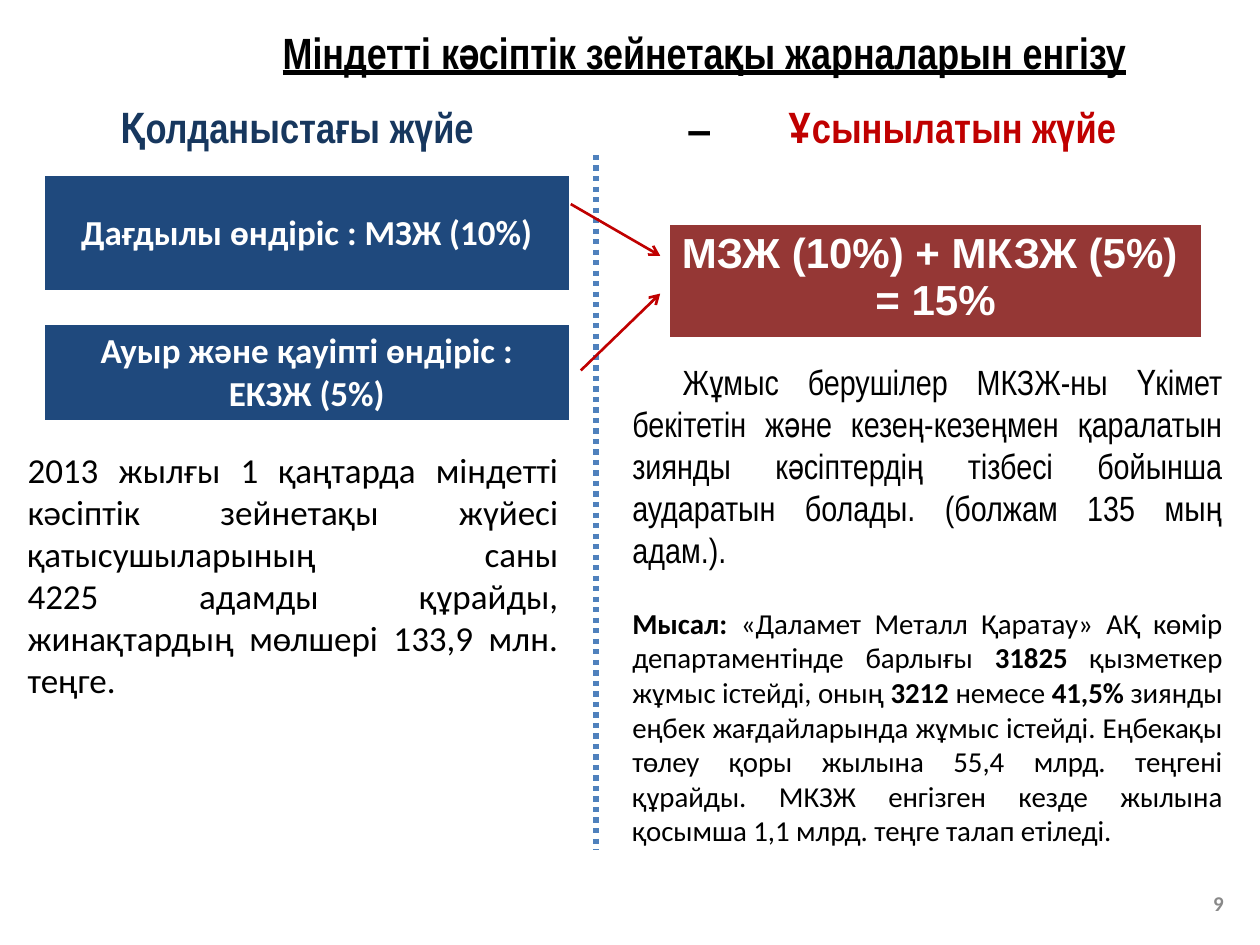
import pptx
import pptx.util
import pptx.dml.color
import pptx.enum.dml
import pptx.enum.shapes
import pptx.enum.text
from pptx.oxml.xmlchemy import OxmlElement
from pptx.util import Inches

ALIGN = pptx.enum.text.PP_ALIGN
ANCHOR = pptx.enum.text.MSO_ANCHOR
DASH = pptx.enum.dml.MSO_LINE_DASH_STYLE

BLACK, WHITE, GREY = "000000", "FFFFFF", "898989"
NAVY, BLUE, LINE_BLUE = "17375E", "1F497D", "4F81BD"
RED, BRICK = "C00000", "953735"
NARROW, BODY, SANS = "Arial Narrow", "Calibri", "Arial"


def rgb(value):
    return pptx.dml.color.RGBColor.from_string(value)


class SlideBuilder:
    def __init__(self, prs):
        self.s = prs.slides.add_slide(prs.slide_layouts[6])

    def format(self, p, size, font, color=BLACK, bold=False, align=ALIGN.CENTER):
        p.alignment = align
        for r in p.runs:
            r.font.size = pptx.util.Pt(size)
            r.font.name = font
            r.font.bold = bold
            r.font.color.rgb = rgb(color)

    def text(self, x, y, w, h, text, size, font, anchor=ANCHOR.TOP, **style):
        tf = self.s.shapes.add_textbox(Inches(x), Inches(y), Inches(w), Inches(h)).text_frame
        tf.word_wrap = True
        tf.vertical_anchor = anchor
        tf.text = text
        self.format(tf.paragraphs[0], size, font, **style)
        return tf

    def mixed_paragraph(self, tf, parts, size, font, align):
        """Add a paragraph whose parts alternate between bold and regular."""
        p = tf.add_paragraph()
        for part in parts:
            p.add_run().text = part
        self.format(p, size, font, align=align)
        for r in p.runs[::2]:
            r.font.bold = True
        return p

    def box(self, x, y, w, h, text, size, font, fill, anchor=ANCHOR.MIDDLE):
        """Add a table of one cell."""
        tbl = self.s.shapes.add_table(1, 1, Inches(x), Inches(y), Inches(w), Inches(h)).table
        cell = tbl.cell(0, 0)
        cell.fill.solid()
        cell.fill.fore_color.rgb = rgb(fill)
        cell.vertical_anchor = anchor
        cell.text_frame.text = text
        self.format(cell.text_frame.paragraphs[0], size, font, WHITE, True)

    def line(self, x1, y1, x2, y2, color, width, dash=None, arrow=False):
        c = self.s.shapes.add_connector(
            pptx.enum.shapes.MSO_CONNECTOR.STRAIGHT,
            Inches(x1), Inches(y1), Inches(x2), Inches(y2))
        c.line.color.rgb = rgb(color)
        c.line.width = pptx.util.Pt(width)
        if dash:
            c.line.dash_style = dash
        if arrow:
            tail = OxmlElement("a:tailEnd")
            tail.set("type", "arrow")
            c.line._get_or_add_ln().append(tail)
        c._element.spPr.append(OxmlElement("a:effectLst"))


def main():
    prs = pptx.Presentation()
    prs.slide_width, prs.slide_height = Inches(10), Inches(7.5)
    b = SlideBuilder(prs)

    # Title and column headings
    title = b.text(1.18, 0.15, 8.82, 0.53, "Міндетті кәсіптік зейнетақы жарналарын енгізу",
                   25, NARROW, ANCHOR.MIDDLE, bold=True)
    title.paragraphs[0].runs[0].font.underline = True
    b.text(0.51, 0.76, 3.7, 0.51, "Қолданыстағы жүйе", 24, NARROW, color=NAVY, bold=True)
    b.text(5.3, 0.76, 0.5, 0.51, "–", 25, SANS, color=BLACK, bold=True)
    b.text(5.75, 0.76, 3.62, 0.51, "Ұсынылатын жүйе", 24, NARROW, color=RED, bold=True)

    # Current system
    b.text(0.12, 3.51, 4.41, 2.12,
           "2013 жылғы 1 қаңтарда міндетті кәсіптік зейнетақы жүйесі қатысушыларының саны\v"
           "4225 адамды құрайды, жинақтардың мөлшері 133,9 млн. теңге.",
           20, BODY, align=ALIGN.JUSTIFY)
    b.box(0.35, 1.39, 4.17, 0.92, "Дағдылы өндіріс : МЗЖ (10%)", 20, BODY, BLUE)
    b.box(0.35, 2.57, 4.17, 0.75, "Ауыр және қауіпті өндіріс : ЕКЗЖ (5%)", 20, BODY, BLUE)

    # Proposed system
    b.box(5.31, 1.78, 4.23, 0.88, "МЗЖ (10%) + МКЗЖ (5%) \v= 15%", 24, SANS, BRICK, ANCHOR.TOP)
    tf = b.text(4.92, 2.81, 4.88, 4.01,
                "Жұмыс берушілер МКЗЖ-ны Үкімет бекітетін және кезең-кезеңмен қаралатын "
                "зиянды кәсіптердің тізбесі бойынша аударатын болады. (болжам 135 мың адам.).",
                20, NARROW, align=ALIGN.JUSTIFY)
    tf.paragraphs[0]._p.get_or_add_pPr().set("indent", str(Inches(0.4)))
    example = b.mixed_paragraph(tf, [
        "Мысал: ", "«Даламет Металл Қаратау» АҚ көмір департаментінде барлығы ",
        "31825 ", "қызметкер жұмыс істейді, оның",
        " 3212 ", "немесе",
        " 41,5% ", "зиянды еңбек жағдайларында жұмыс істейді. Еңбекақы төлеу қоры жылына "
        "55,4 млрд. теңгені құрайды. МКЗЖ енгізген кезде жылына қосымша 1,1 млрд. "
        "теңге талап етіледі.",
    ], 16.5, BODY, ALIGN.JUSTIFY)
    example.space_before = pptx.util.Pt(20)

    # Divider and arrows
    b.line(4.73, 1.23, 4.73, 6.74, LINE_BLUE, 3, dash=DASH.ROUND_DOT)
    b.line(4.61, 2.94, 5.24, 2.33, RED, 1.5, arrow=True)
    b.line(4.53, 1.62, 5.24, 2.03, RED, 1.5, arrow=True)

    # Page number
    b.text(9.02, 6.97, 0.79, 0.4, "9", 12, BODY, ANCHOR.MIDDLE,
           color=GREY, bold=True, align=ALIGN.RIGHT)

    prs.save("out.pptx")


if __name__ == "__main__":
    main()
